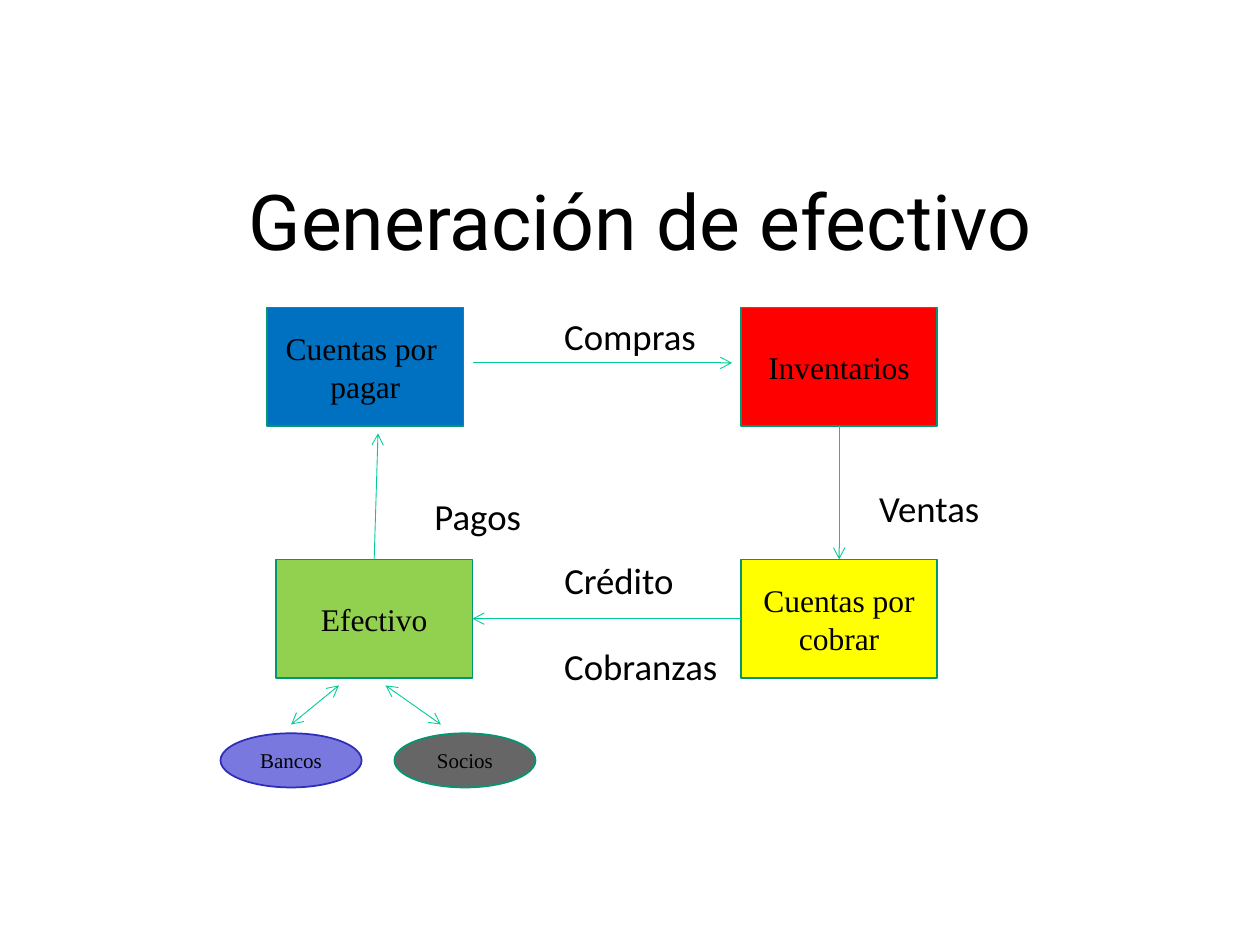
from lxml.etree import SubElement
from pptx import Presentation
from pptx.dml.color import RGBColor
from pptx.enum.shapes import MSO_CONNECTOR, MSO_SHAPE
from pptx.enum.text import MSO_ANCHOR, MSO_AUTO_SIZE, PP_ALIGN
from pptx.oxml.ns import qn
from pptx.util import Inches, Pt

COLORS = {
    "text": "000000",
    "border": "009771",
    "arrow": "00CC99",
    "payables": "0070C0",
    "inventory": "FF0000",
    "cash": "92D050",
    "receivables": "FFFF00",
    "banks": "7878DE",
    "banks_border": "2D2DB9",
    "partners": "666666",
}
TOP, LEFT, BOTTOM, RIGHT = range(4)
ACCOUNT_SIZE = (1.56, 0.94)


def color(name):
    return RGBColor.from_string(COLORS[name])


def write_text(frame, text, font="Times New Roman", size=18, align=PP_ALIGN.CENTER,
               anchor=MSO_ANCHOR.MIDDLE, wrap=True):
    """Fill a text frame, one paragraph per line of text."""
    frame.word_wrap = wrap
    frame.vertical_anchor = anchor
    for index, line in enumerate(text.split("\n")):
        para = frame.add_paragraph() if index else frame.paragraphs[0]
        para.alignment = align
        span = para.add_run()
        span.text = line
        span.font.name = font
        span.font.size = Pt(size)
        span.font.color.rgb = color("text")


def add_node(page, kind, left, top, size, text, fill, border="border", font_size=18):
    width, height = size
    node = page.shapes.add_shape(kind, Inches(left), Inches(top), Inches(width), Inches(height))
    node.shadow.inherit = False
    node.fill.solid()
    node.fill.fore_color.rgb = color(fill)
    node.line.color.rgb = color(border)
    node.line.width = Pt(1)
    write_text(node.text_frame, text, size=font_size)
    return node


def add_arrow(page, start, end, both_ends=False):
    """Draw an arrow; each end is an (x, y) point or a (shape, side) pair."""
    arrow = page.shapes.add_connector(MSO_CONNECTOR.STRAIGHT, 0, 0, 0, 0)
    if hasattr(start[0], "shape_id"):
        arrow.begin_connect(*start)
    else:
        arrow.begin_x, arrow.begin_y = map(Inches, start)
    if hasattr(end[0], "shape_id"):
        arrow.end_connect(*end)
    else:
        arrow.end_x, arrow.end_y = map(Inches, end)
    arrow.line.color.rgb = color("arrow")
    arrow.line.width = Pt(0.5)
    line = arrow.line._get_or_add_ln()
    for tag in ("a:headEnd", "a:tailEnd") if both_ends else ("a:tailEnd",):
        SubElement(line, qn(tag), type="arrow")
    SubElement(arrow._element.spPr, qn("a:effectLst"))


def add_label(page, left, top, width, text, wrap=False):
    label = page.shapes.add_textbox(Inches(left), Inches(top), Inches(width), Inches(0.45))
    write_text(label.text_frame, text, font="Calibri", size=21, align=PP_ALIGN.LEFT,
               anchor=MSO_ANCHOR.TOP, wrap=wrap)
    label.text_frame.auto_size = MSO_AUTO_SIZE.SHAPE_TO_FIT_TEXT


def add_title(page, left, top, width, height):
    title = page.shapes.title
    title.left, title.top = Inches(left), Inches(top)
    title.width, title.height = Inches(width), Inches(height)
    write_text(title.text_frame, "Generación de efectivo", font="Roboto", size=44)


def add_cash_cycle(page, left, top):
    """Four accounts and the flows between them; returns the cash account."""
    right, lower = left + 3.76, top + 2
    cash_left = left + 0.07

    def account(x, y, text, fill):
        return add_node(page, MSO_SHAPE.RECTANGLE, x, y, ACCOUNT_SIZE, text, fill)

    account(left, top, "Cuentas por \npagar", "payables")
    inventory = account(right, top, "Inventarios", "inventory")
    cash = account(cash_left, lower, "Efectivo", "cash")
    receivables = account(right, lower, "Cuentas por cobrar", "receivables")

    add_arrow(page, (left + 1.63, top + 0.44), (left + 3.69, top + 0.44))
    add_arrow(page, (inventory, BOTTOM), (receivables, TOP))
    add_arrow(page, (receivables, LEFT), (cash, RIGHT))
    add_arrow(page, (cash, TOP), (left + 0.88, top + 1))

    flow_left = left + 2.26
    add_label(page, flow_left, top, 1.26, "Compras")
    add_label(page, left + 4.76, top + 1.37, 1, "Ventas")
    add_label(page, flow_left, top + 1.94, 1.08, "Crédito")
    add_label(page, flow_left, top + 2.62, 1.43, "Cobranzas")
    add_label(page, left + 1.23, top + 1.43, 1.03, "Pagos", wrap=True)


def add_funding(page, left, top):
    """Sources of funds, exchanging cash with the account above them."""
    size = (1.12, 0.43)
    add_node(page, MSO_SHAPE.OVAL, left, top, size, "Bancos", "banks", "banks_border", 12)
    add_node(page, MSO_SHAPE.OVAL, left + 1.38, top, size, "Socios", "partners", font_size=12)
    for start, end in ((0.56, 0.94), (1.75, 1.31)):
        add_arrow(page, (left + start, top - 0.07), (left + end, top - 0.38), both_ends=True)


def main():
    deck = Presentation()
    deck.slide_width, deck.slide_height = Inches(10), Inches(7.5)
    page = deck.slides.add_slide(deck.slide_layouts[5])
    add_title(page, 1.68, 1.27, 6.81, 0.94)
    add_cash_cycle(page, 2.12, 2.44)
    add_funding(page, 1.75, 5.82)
    deck.save("out.pptx")


if __name__ == "__main__":
    main()
